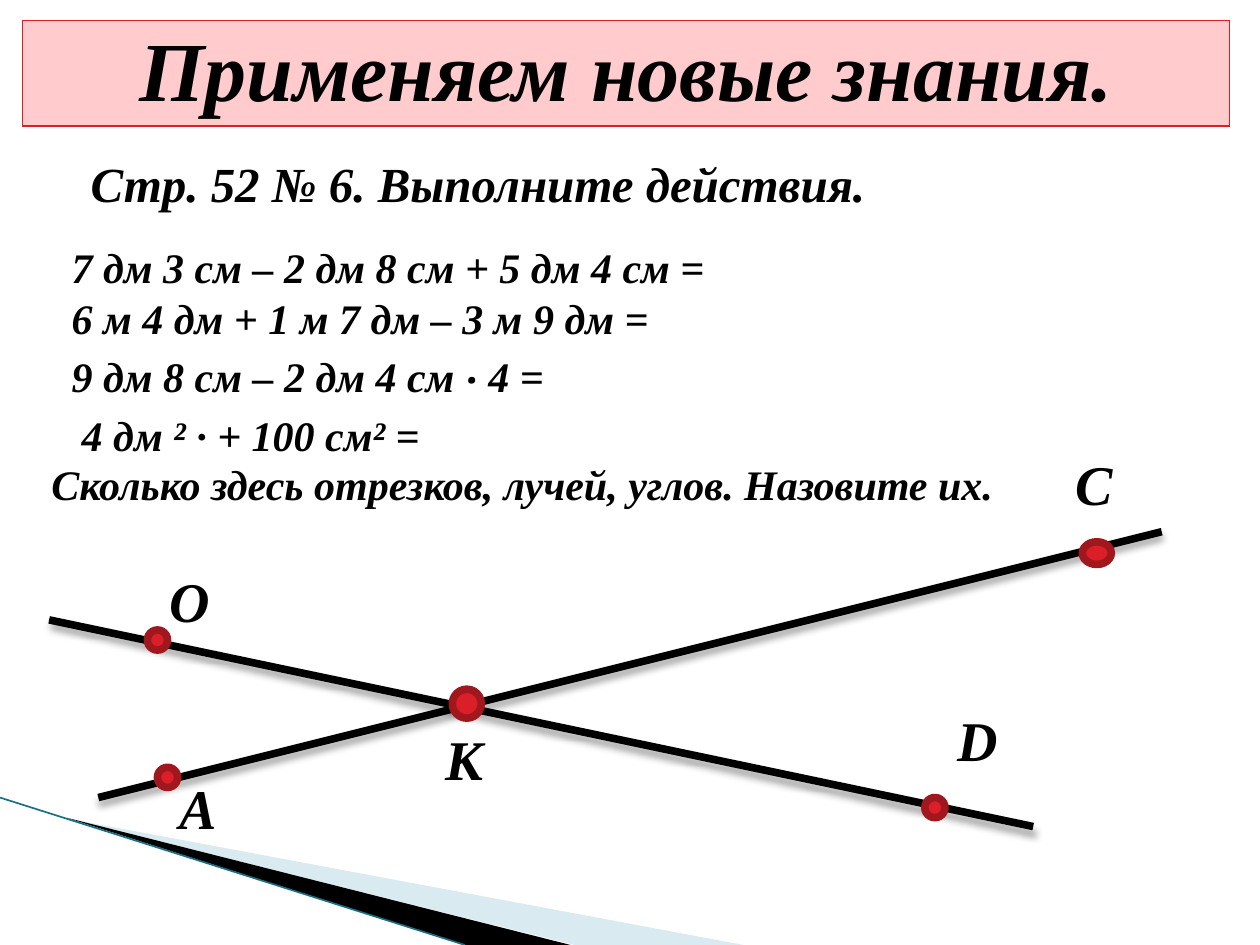
from lxml import etree
from pptx import Presentation
from pptx import util as u
from pptx.dml.color import RGBColor
from pptx.enum import shapes, text
from pptx.oxml import parse_xml
from pptx.oxml.ns import nsdecls, qn

PX = 9144  # EMU per px, 100 px to the inch
FONT = "Times New Roman"
BLACK = RGBColor(0x00, 0x00, 0x00)
RED = RGBColor(0xDA, 0x1F, 0x28)
DARK_RED = RGBColor(0xA1, 0x17, 0x1E)
PINK = RGBColor(0xFF, 0xCB, 0xCD)
PALE_BLUE = RGBColor(0xA0, 0xCB, 0xDC)
TEAL = RGBColor(0x1B, 0x6F, 0x85)

SHADOW = (
    f'<a:effectLst {nsdecls("a")}><a:outerShdw blurRad="50800" dist="38100" '
    'dir="5400000" rotWithShape="0"><a:srgbClr val="000000">'
    '<a:alpha val="35000"/></a:srgbClr></a:outerShdw></a:effectLst>'
)
NO_SHADOW = f'<a:effectLst {nsdecls("a")}/>'


def px(*lengths):
    return [u.Emu(length * PX) for length in lengths]


def add_run(paragraph, words, size):
    run = paragraph.add_run()
    run.text = words
    font = run.font
    font.name, font.size = FONT, u.Pt(size)
    font.bold = font.italic = True
    font.color.rgb = BLACK


def add_label(parent, box, words, size):
    label = parent.add_textbox(*px(*box))
    frame = label.text_frame
    frame.word_wrap = False
    frame.auto_size = text.MSO_AUTO_SIZE.SHAPE_TO_FIT_TEXT
    add_run(frame.paragraphs[0], words, size)


def add_stroke(parent, start, end, color, width, effect):
    stroke = parent.add_connector(shapes.MSO_CONNECTOR.STRAIGHT, *px(*start, *end))
    stroke.line.color.rgb = color
    stroke.line.width = u.Pt(width)
    stroke._element.spPr.append(parse_xml(effect))


def add_wedge(parent, corners, color):
    builder = parent.build_freeform(*corners[0], scale=PX)
    builder.add_line_segments(corners[1:], close=True)
    wedge = builder.convert_to_shape()
    wedge.shadow.inherit = False
    wedge.fill.solid()
    wedge.fill.fore_color.rgb = color
    wedge.line.fill.background()
    return wedge


def add_corner_decoration(parent, left, top, bottom):
    light = add_wedge(
        parent, [(left + 55, top + 17), (left + 590, bottom), (left + 456, bottom)],
        PALE_BLUE)
    tint = light._element.spPr.find(qn("a:solidFill"))[0]
    etree.SubElement(tint, qn("a:alpha")).set("val", "40000")
    add_wedge(
        parent, [(left + 53, top + 16), (left + 453, bottom), (left + 369, bottom)],
        BLACK)
    add_stroke(parent, (left, top), (left + 369, bottom), TEAL, 0.95, NO_SHADOW)


def add_title(parent, box):
    table = parent.add_table(1, 1, *px(*box)).table
    table.first_row = table.horz_banding = False
    cell = table.cell(0, 0)
    cell.fill.solid()
    cell.fill.fore_color.rgb = PINK
    borders = [
        parse_xml(f'<a:{side} {nsdecls("a")} w="9525"><a:solidFill>'
                  f'<a:srgbClr val="{RED}"/></a:solidFill></a:{side}>')
        for side in ("lnL", "lnR", "lnT", "lnB")
    ]
    cell_properties = cell._tc.get_or_add_tcPr()
    for position, border in enumerate(borders):
        cell_properties.insert(position, border)
    heading = cell.text_frame.paragraphs[0]
    heading.alignment = text.PP_ALIGN.CENTER
    add_run(heading, "Применяем новые знания.", 48)


def add_exercise(parent, left, top):
    add_label(parent, (left + 15, top, 642, 57), "Стр. 52 № 6. Выполните действия.", 28)
    for indent, drop, width, expression in (
        (0, 70, 528, "7 дм 3 см – 2 дм 8 см + 5 дм 4 см ="),
        (0, 110, 491, "6 м 4 дм + 1 м 7 дм – 3 м 9 дм ="),
        (0, 156, 414, "9 дм 8 см – 2 дм 4 см ‧ 4 ="),
        (8, 203, 300, "4 дм ² · + 100 см² ="),
    ):
        add_label(parent, (left + indent, top + drop, width, 50), expression, 24)


def add_crossing_lines(parent, left, top):
    drawing = parent.add_group_shape().shapes
    for start, end in (((0, 140), (781, 304)), ((883, 70), (39, 281))):
        add_stroke(drawing, (left + start[0], top + start[1]),
                   (left + end[0], top + end[1]), BLACK, 4.33, SHADOW)

    # name, label position and width, point box
    points = (
        ("О", (86, 93, 53), (78, 148, 16, 16)),
        ("А", (94, 257, 50), (86, 257, 16, 16)),
        ("К", (305, 218, 51), (320, 195, 23, 23)),
        ("D", (711, 203, 53), (695, 281, 16, 16)),
        ("С", (805, 0, 50), (820, 78, 23, 18)),
    )
    for _, _, (x, y, width, height) in points:
        point = drawing.add_shape(shapes.MSO_SHAPE.OVAL,
                                  *px(left + x, top + y, width, height))
        point.shadow.inherit = False
        point.fill.solid()
        point.fill.fore_color.rgb = RED
        point.line.color.rgb = DARK_RED
        point.line.width = u.Pt(4.33)
    for name, (x, y, width), _ in points:
        add_label(drawing, (left + x, top + y, width, 64), name, 32)


def main():
    deck = Presentation()
    deck.slide_width, deck.slide_height = px(1000, 750)
    parts = deck.slides.add_slide(deck.slide_layouts[6]).shapes
    add_corner_decoration(parts, 0, 633, 750)
    add_title(parts, (18, 16, 958, 84))
    add_exercise(parts, 47, 117)
    add_crossing_lines(parts, 39, 352)
    add_label(parts, (31, 359, 775, 50),
              "Сколько здесь отрезков, лучей, углов. Назовите их.", 24)
    deck.save("out.pptx")


if __name__ == "__main__":
    main()
